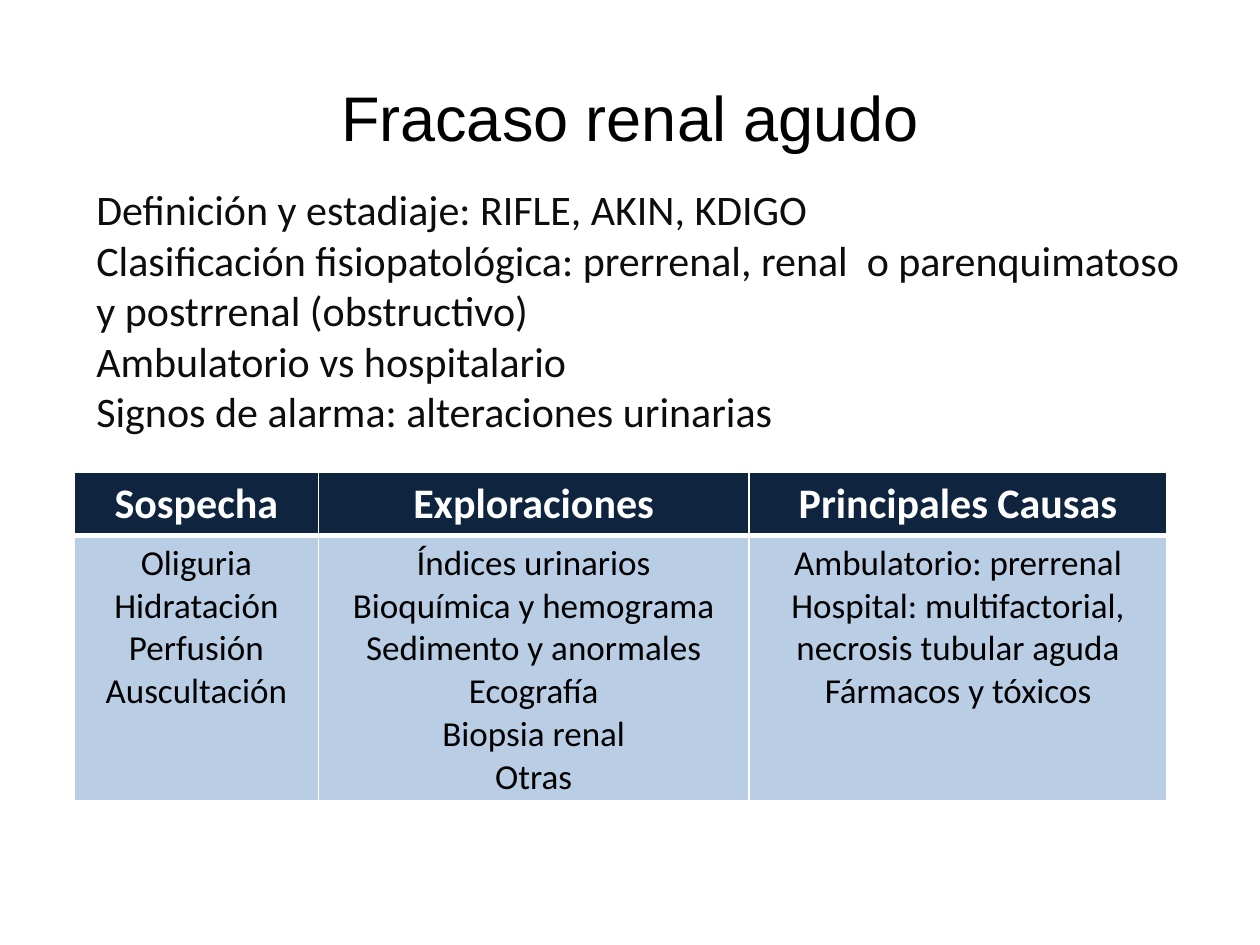
import pptx
import pptx.dml.color
import pptx.enum.text
import pptx.oxml
import pptx.oxml.ns
import pptx.util

Pt = pptx.util.Pt
RGBColor = pptx.dml.color.RGBColor
Align = pptx.enum.text.PP_ALIGN
Anchor = pptx.enum.text.MSO_ANCHOR

WHITE = RGBColor(0xFF, 0xFF, 0xFF)
BLACK = RGBColor(0x00, 0x00, 0x00)
CHARCOAL = RGBColor(0x0D, 0x0D, 0x0D)
NAVY = RGBColor(0x0F, 0x24, 0x3E)
PALE_BLUE = RGBColor(0xB9, 0xCD, 0xE5)

SUMMARY = [
    "Definición y estadiaje: RIFLE, AKIN, KDIGO",
    "Clasificación fisiopatológica: prerrenal, renal  o parenquimatoso y postrrenal (obstructivo)",
    "Ambulatorio vs hospitalario",
    "Signos de alarma: alteraciones urinarias",
]
WORKUP = {
    "Sospecha": ["Oliguria", "Hidratación", "Perfusión", "Auscultación"],
    "Exploraciones": [
        "Índices urinarios", "Bioquímica y hemograma", "Sedimento y anormales",
        "Ecografía", "Biopsia renal", "Otras",
    ],
    "Principales Causas": [
        "Ambulatorio: prerrenal",
        "Hospital: multifactorial, necrosis tubular aguda",
        "Fármacos y tóxicos",
    ],
}


class SlideBuilder:
    title_font = "Arial"
    body_font = "Calibri"
    title_size = 36
    large_size = 24
    small_size = 20

    def __init__(self, presentation):
        self.slide = presentation.slides.add_slide(presentation.slide_layouts[5])
        self.slide.background.fill.solid()
        self.slide.background.fill.fore_color.rgb = WHITE

    def set_lines(self, text_frame, lines, font_name, size, color, align, bold=False):
        text_frame.text = "\n".join(lines)
        for paragraph in text_frame.paragraphs:
            paragraph.alignment = align
            for run in paragraph.runs:
                run.font.name = font_name
                run.font.size = Pt(size)
                run.font.bold = bold
                run.font.color.rgb = color

    def title(self, text, left, top, width, height):
        shape = self.slide.shapes.title
        shape.left, shape.top = Pt(left), Pt(top)
        shape.width, shape.height = Pt(width), Pt(height)
        shape.text_frame.vertical_anchor = Anchor.MIDDLE
        self.set_lines(shape.text_frame, [text], self.title_font, self.title_size,
                       BLACK, Align.CENTER)

    def text(self, lines, left, top, width, height):
        shape = self.slide.shapes.add_textbox(Pt(left), Pt(top), Pt(width), Pt(height))
        shape.text_frame.word_wrap = True
        self.set_lines(shape.text_frame, lines, self.body_font, self.large_size,
                       CHARCOAL, Align.LEFT)

    def border(self, cell, top, bottom):
        """Draw white borders on a cell, one point wide at the sides."""
        properties = cell._tc.get_or_add_tcPr()
        widths = {"lnL": 1, "lnR": 1, "lnT": top, "lnB": bottom}
        for index, (tag, width) in enumerate(widths.items()):
            line = pptx.oxml.parse_xml(
                f'<a:{tag} {pptx.oxml.ns.nsdecls("a")} w="{Pt(width)}">'
                f'<a:solidFill><a:srgbClr val="{WHITE}"/></a:solidFill></a:{tag}>'
            )
            properties.insert(index, line)

    def cell(self, cell, lines, size, color, fill, bold, top, bottom):
        cell.fill.solid()
        cell.fill.fore_color.rgb = fill
        self.set_lines(cell.text_frame, lines, self.body_font, size, color,
                       Align.CENTER, bold)
        self.border(cell, top, bottom)

    def table(self, columns, left, top, column_widths, row_heights):
        """Add a table from a mapping of heading to the lines below it."""
        table = self.slide.shapes.add_table(
            len(row_heights), len(columns), Pt(left), Pt(top),
            Pt(sum(column_widths)), Pt(sum(row_heights)),
        ).table
        for row, height in zip(table.rows, row_heights):
            row.height = Pt(height)
        for index, (heading, lines) in enumerate(columns.items()):
            table.columns[index].width = Pt(column_widths[index])
            self.cell(table.cell(0, index), [heading], self.large_size, WHITE,
                      NAVY, bold=True, top=1, bottom=3)
            self.cell(table.cell(1, index), lines, self.small_size, BLACK,
                      PALE_BLUE, bold=False, top=3, bottom=1)


def main():
    presentation = pptx.Presentation()
    presentation.slide_width = Pt(720)
    presentation.slide_height = Pt(540)

    builder = SlideBuilder(presentation)
    builder.title("Fracaso renal agudo", 36, 21.6, 648, 90)
    builder.text(SUMMARY, 48, 101.5, 648, 145.5)
    builder.table(WORKUP, 42.5, 270, [139.5, 246, 239], [36, 151.5])
    presentation.save("out.pptx")


if __name__ == "__main__":
    main()
